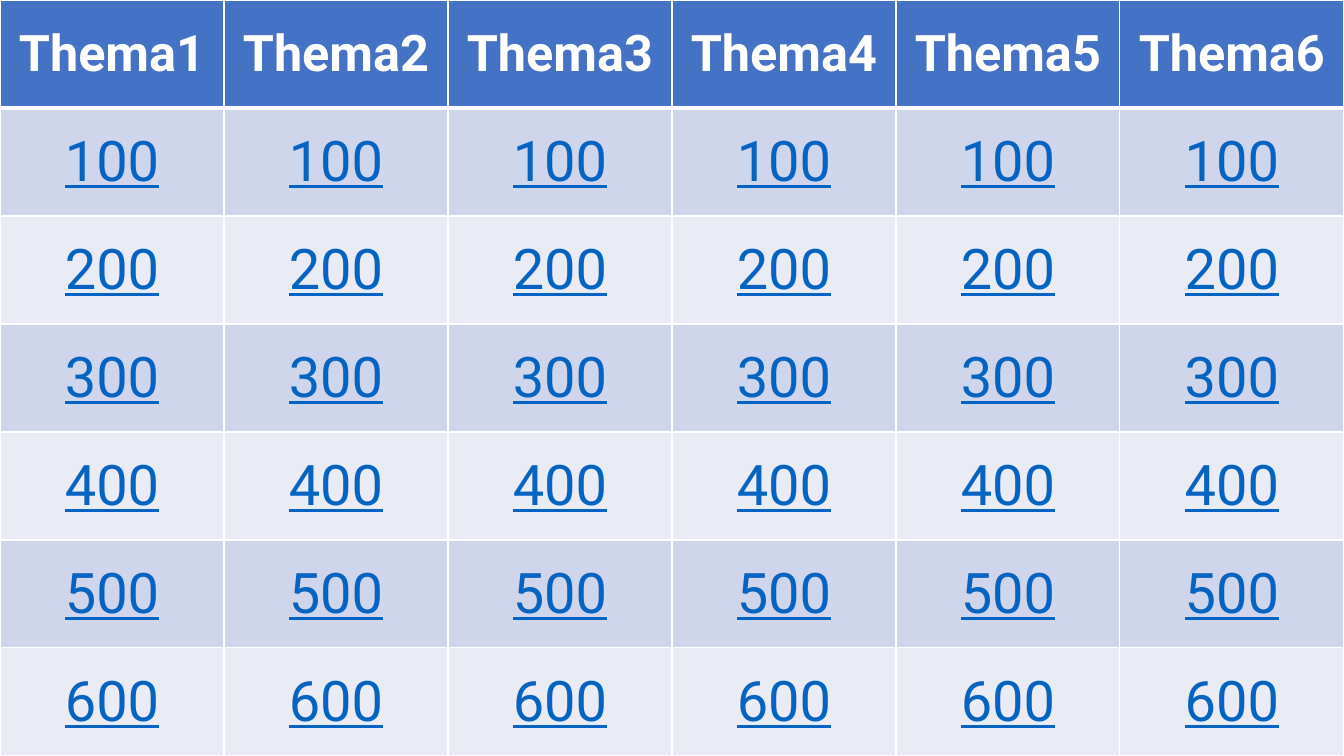
import lxml.etree
import pptx
import pptx.dml.color
import pptx.enum.text
import pptx.oxml.ns
import pptx.util

PX = 12192000 / 1344
SLIDE_WIDTH, SLIDE_HEIGHT = 1344, 756
WHITE = pptx.dml.color.RGBColor(0xFF, 0xFF, 0xFF)
HEADER_BLUE = pptx.dml.color.RGBColor(0x44, 0x72, 0xC4)
BAND_DARK = pptx.dml.color.RGBColor(0xCF, 0xD5, 0xEA)
BAND_LIGHT = pptx.dml.color.RGBColor(0xE9, 0xEB, 0xF5)
LINK_BLUE = pptx.dml.color.RGBColor(0x05, 0x63, 0xC1)
FONT = "Roboto"
TOPICS = [f"Thema{number}" for number in range(1, 7)]
POINTS = range(100, 700, 100)


def px(length):
    """Turn pixels into EMU."""
    return pptx.util.Emu(round(length * PX))


def set_borders(cell, top, bottom):
    """Draw white borders, with widths in points for top and bottom."""
    properties = cell._tc.get_or_add_tcPr()
    qn = pptx.oxml.ns.qn
    for side, width in (("L", 1), ("R", 1), ("T", top), ("B", bottom)):
        border = lxml.etree.SubElement(
            properties, qn(f"a:ln{side}"), w=str(pptx.util.Pt(width)))
        paint = lxml.etree.SubElement(border, qn("a:solidFill"))
        lxml.etree.SubElement(paint, qn("a:srgbClr"), val=str(WHITE))


def fill_cell(cell, text, background, color, size, header):
    """Fill a cell and centre its text, bold for topics and underlined for points."""
    cell.fill.solid()
    cell.fill.fore_color.rgb = background
    cell.vertical_anchor = pptx.enum.text.MSO_ANCHOR.MIDDLE
    paragraph = cell.text_frame.paragraphs[0]
    paragraph.alignment = pptx.enum.text.PP_ALIGN.CENTER
    run = paragraph.add_run()
    run.text = text
    run.font.name = FONT
    run.font.size = pptx.util.Pt(size)
    run.font.bold = header
    run.font.underline = not header
    run.font.color.rgb = color


def add_quiz_board(slide, left, top, width, height):
    """Place the board of topics and points in the given box."""
    row_count, column_count = len(POINTS) + 1, len(TOPICS)
    board = slide.shapes.add_table(
        row_count, column_count, px(left), px(top), px(width), px(height)).table
    for column in board.columns:
        column.width = px(width / column_count)
    for row in board.rows:
        row.height = px(height / row_count)
    for column, topic in enumerate(TOPICS):
        heading = board.cell(0, column)
        set_borders(heading, 1, 3)
        fill_cell(heading, topic, HEADER_BLUE, WHITE, 36, True)
        for row, points in enumerate(POINTS, start=1):
            question = board.cell(row, column)
            set_borders(question, 3 if row == 1 else 1, 1)
            band = BAND_DARK if row % 2 else BAND_LIGHT
            fill_cell(question, str(points), band, LINK_BLUE, 40, False)


def main():
    """Build and save the quiz slide."""
    presentation = pptx.Presentation()
    presentation.slide_width = px(SLIDE_WIDTH)
    presentation.slide_height = px(SLIDE_HEIGHT)
    slide = presentation.slides.add_slide(presentation.slide_layouts[6])
    add_quiz_board(slide, 0, 0, SLIDE_WIDTH, SLIDE_HEIGHT)
    presentation.save("out.pptx")


if __name__ == "__main__":
    main()
